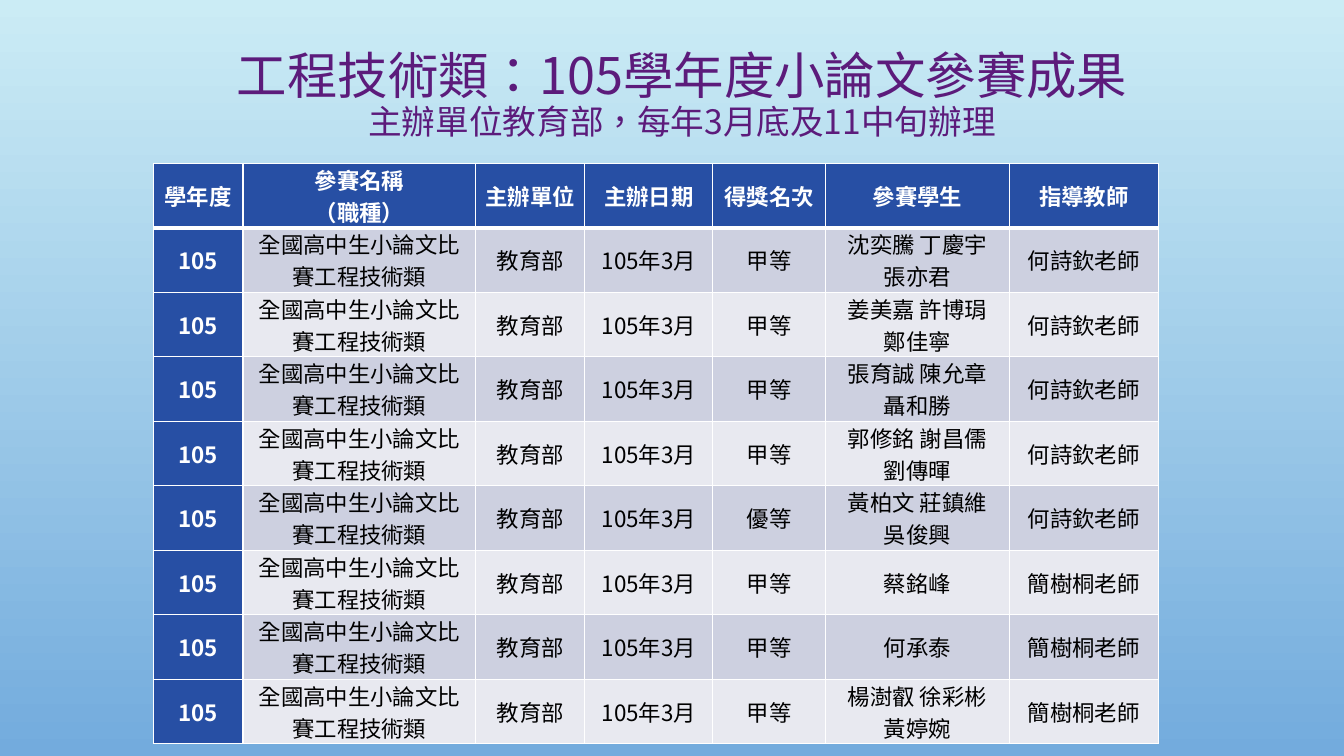
import pptx
import pptx.util
import pptx.dml.color
import pptx.enum.text
import pptx.oxml
import pptx.oxml.ns
from lxml import etree

Inches, Pt = pptx.util.Inches, pptx.util.Pt

# Content
HEADING = "工程技術類：105學年度小論文參賽成果"
SUBHEADING = "主辦單位教育部，每年3月底及11中旬辦理"
COLUMNS = [
    ("學年度", 0.89),
    ("參賽名稱\n（職種）", 2.31),
    ("主辦單位", 1.08),
    ("主辦日期", 1.27),
    ("得獎名次", 1.12),
    ("參賽學生", 1.82),
    ("指導教師", 1.48),
]
YEAR, CONTEST = "105", "全國高中生小論文比賽工程技術類"
HOST, DATE = "教育部", "105年3月"
RESULTS = [
    ("甲等", "沈奕騰 丁慶宇\n張亦君", "何詩欽老師"),
    ("甲等", "姜美嘉 許博琄\n鄭佳寧", "何詩欽老師"),
    ("甲等", "張育誠 陳允章\n聶和勝", "何詩欽老師"),
    ("甲等", "郭修銘 謝昌儒\n劉傳暉", "何詩欽老師"),
    ("優等", "黃柏文 莊鎮維\n吳俊興", "何詩欽老師"),
    ("甲等", "蔡銘峰", "簡樹桐老師"),
    ("甲等", "何承泰", "簡樹桐老師"),
    ("甲等", "楊澍叡 徐彩彬\n黃婷婉", "簡樹桐老師"),
]
FONT, LANGUAGE = "Noto Sans CJK SC", "zh-TW"
COLORS = {
    "sky": "CBECF5", "sea": "73ABDD", "purple": "5C1B7B", "blue": "274FA4",
    "band": "CDD0E0", "pale": "E8E9F0", "white": "FFFFFF", "black": "000000",
}
ROW_HEIGHT = 0.64


def rgb(name):
    return pptx.dml.color.RGBColor.from_string(COLORS[name])


def add_text(paragraph, text, size, color, bold=False):
    paragraph.alignment = pptx.enum.text.PP_ALIGN.CENTER
    run = paragraph.add_run()
    run.text = text
    run.font.name, run.font.size, run.font.bold = FONT, Pt(size), bold
    run.font.color.rgb = rgb(color)
    # Traditional Chinese centres its punctuation
    run.font._element.set("lang", LANGUAGE)
    east_asian = etree.SubElement(run.font._element, pptx.oxml.ns.qn("a:ea"))
    east_asian.set("typeface", FONT)


def add_border(cell, side, points):
    cell._tc.get_or_add_tcPr().append(pptx.oxml.parse_xml(
        f'<a:ln{side} {pptx.oxml.ns.nsdecls("a")} w="{Pt(points)}"><a:solidFill>'
        f'<a:srgbClr val="{COLORS["white"]}"/></a:solidFill></a:ln{side}>'))


def fill_cell(cell, text, row, column):
    is_label = row == 0 or column == 0
    cell.margin_left = cell.margin_right = Inches(0.06)
    cell.margin_top = cell.margin_bottom = 0
    cell.vertical_anchor = pptx.enum.text.MSO_ANCHOR.MIDDLE
    # The line under the header row is thick
    thick_side = {0: "B", 1: "T"}.get(row)
    for side in "LRTB":
        add_border(cell, side, 3 if side == thick_side else 1)
    cell.fill.solid()
    cell.fill.fore_color.rgb = rgb(
        "blue" if is_label else "band" if row % 2 else "pale")
    for index, line in enumerate(text.split("\n")):
        frame = cell.text_frame
        paragraph = frame.add_paragraph() if index else frame.paragraphs[0]
        add_text(paragraph, line, size=16, bold=is_label,
                 color="white" if is_label else "black")


def main():
    presentation = pptx.Presentation()
    presentation.slide_width = Inches(13.33)
    presentation.slide_height = Inches(7.5)
    slide = presentation.slides.add_slide(presentation.slide_layouts[6])

    # Background, light at the top
    background = slide.background.fill
    background.gradient()
    background.gradient_angle = 270
    for stop, name in zip(background.gradient_stops, ("sky", "sea")):
        stop.color.rgb = rgb(name)

    # Title
    title = slide.shapes.add_textbox(
        Inches(1.1), Inches(0.4), Inches(11.33), Inches(1.11)).text_frame
    title.word_wrap = True
    title.vertical_anchor = pptx.enum.text.MSO_ANCHOR.MIDDLE
    title_lines = title.paragraphs[0]
    title_lines.line_spacing = 0.9
    add_text(title_lines, HEADING, size=36, color="purple")
    title_lines.add_line_break()
    add_text(title_lines, SUBHEADING, size=24, color="purple")

    # Results table
    rows = [[heading for heading, _ in COLUMNS]]
    rows += [(YEAR, CONTEST, HOST, DATE, *result) for result in RESULTS]
    results = slide.shapes.add_table(
        len(rows), len(COLUMNS), Inches(1.52), Inches(1.62),
        Inches(sum(width for _, width in COLUMNS)),
        Inches(ROW_HEIGHT * len(rows))).table
    results.first_col = True
    for column, (_, width) in enumerate(COLUMNS):
        results.columns[column].width = Inches(width)
    for row, texts in enumerate(rows):
        results.rows[row].height = Inches(ROW_HEIGHT)
        for column, text in enumerate(texts):
            fill_cell(results.cell(row, column), text, row, column)

    presentation.save("out.pptx")


if __name__ == "__main__":
    main()
